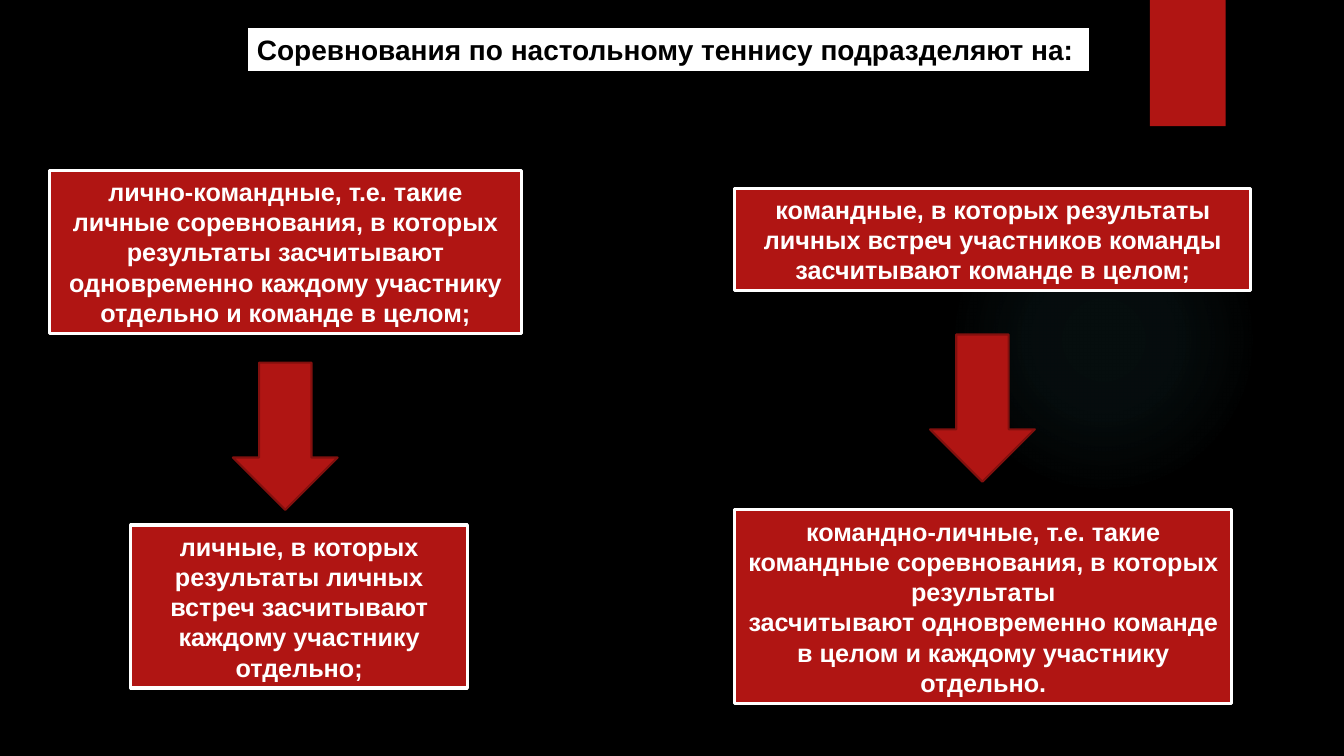
import dataclasses

import lxml.etree
import pptx
import pptx.dml.color
import pptx.enum.shapes
import pptx.enum.text
import pptx.oxml.ns
import pptx.util

Cm = pptx.util.Cm
KIND = pptx.enum.shapes.MSO_SHAPE
ALIGN = pptx.enum.text.PP_ALIGN
HUES = {"black": "000000", "white": "FFFFFF", "red": "B01513",
        "edge": "82100E", "glow": "50B9C1"}


@dataclasses.dataclass
class Part:
    left: float
    top: float
    wide: float
    high: float
    kind: KIND = KIND.RECTANGLE
    line: str = ""
    width: float = 0
    text: str = ""


PARTS = [
    # Ribbon
    Part(28.98, 0, 1.91, 3.18),
    # Kinds of contests
    Part(3.3, 13.23, 8.48, 4.11, line="white", width=2.25,
         text="личные, в которых результаты личных встреч засчитывают "
              "каждому участнику отдельно;"),
    Part(18.52, 4.75, 13, 2.57, line="white", width=2.25,
         text="командные, в которых результаты личных встреч участников "
              "команды засчитывают команде в целом;"),
    Part(1.24, 4.29, 11.91, 4.11, line="white", width=2.25,
         text="лично-командные, т.е. такие личные соревнования, в которых "
              "результаты засчитывают одновременно каждому участнику "
              "отдельно и команде в целом;"),
    Part(18.52, 12.85, 12.52, 4.88, line="white", width=2.25,
         text="командно-личные, т.е. такие командные соревнования, в которых "
              "результаты\nзасчитывают одновременно команде в целом и каждому "
              "участнику отдельно."),
    # Arrows
    Part(5.87, 9.14, 2.64, 3.71, KIND.DOWN_ARROW, "edge", 1.5),
    Part(23.44, 8.43, 2.64, 3.71, KIND.DOWN_ARROW, "edge", 1.5),
]


def paint(fill, hue: str) -> None:
    fill.solid()
    fill.fore_color.rgb = pptx.dml.color.RGBColor.from_string(HUES[hue])


def write(shape, text: str, size: int, hue: str, align: ALIGN) -> None:
    frame = shape.text_frame
    frame.word_wrap = True
    para = frame.paragraphs[0]
    para.alignment = align
    for pos, words in enumerate(text.split("\n")):
        if pos:
            para.add_line_break()
        run = para.add_run()
        run.text = words
        run.font.name = "Arial"
        run.font.size = pptx.util.Pt(size)
        run.font.bold = True
        paint(run.font.fill, hue)


def edge(shape, hue: str, width: float) -> None:
    paint(shape.line.fill, hue)
    shape.line.width = pptx.util.Pt(width)


def draw(slide, part: Part):
    shape = slide.shapes.add_shape(
        part.kind, Cm(part.left), Cm(part.top), Cm(part.wide), Cm(part.high))
    shape.shadow.inherit = False
    paint(shape.fill, "red")
    if part.line:
        edge(shape, part.line, part.width)
    else:
        shape.line.fill.background()
    if part.text:
        write(shape, part.text, 18, "white", ALIGN.CENTER)
    return shape


def add_glow(slide) -> None:
    shape = draw(slide, Part(23.9, 4.65, 7.82, 7.82, KIND.OVAL))
    stops = "".join(
        f'<a:gs pos="{pos}000"><a:srgbClr val="{HUES["glow"]}">'
        f'<a:alpha val="{alpha}000"/></a:srgbClr></a:gs>'
        for pos, alpha in ((0, 7), (36, 6), (69, 0), (100, 0)))
    grad = lxml.etree.fromstring(
        f'<a:gradFill {pptx.oxml.ns.nsdecls("a")}><a:gsLst>{stops}</a:gsLst>'
        '<a:path path="circle"><a:fillToRect l="50000" t="50000" '
        'r="50000" b="50000"/></a:path></a:gradFill>')
    old = shape._element.spPr.find(pptx.oxml.ns.qn("a:solidFill"))
    old.getparent().replace(old, grad)


def add_title(slide) -> None:
    title = slide.shapes.title
    title.left, title.top = Cm(6.22), Cm(0.69)
    title.width, title.height = Cm(21.26), Cm(1.12)
    paint(title.fill, "white")
    edge(title, "black", 1.5)
    frame = title.text_frame
    frame.auto_size = pptx.enum.text.MSO_AUTO_SIZE.NONE
    frame.vertical_anchor = pptx.enum.text.MSO_ANCHOR.MIDDLE
    frame.margin_right = 0
    write(title, "Соревнования по настольному теннису подразделяют на:",
          20, "black", ALIGN.LEFT)


def main() -> None:
    deck = pptx.Presentation()
    deck.slide_width, deck.slide_height = Cm(33.87), Cm(19.05)
    slide = deck.slides.add_slide(deck.slide_layouts[5])
    paint(slide.background.fill, "black")
    add_glow(slide)
    add_title(slide)
    for part in PARTS:
        draw(slide, part)
    deck.save("out.pptx")


if __name__ == "__main__":
    main()
